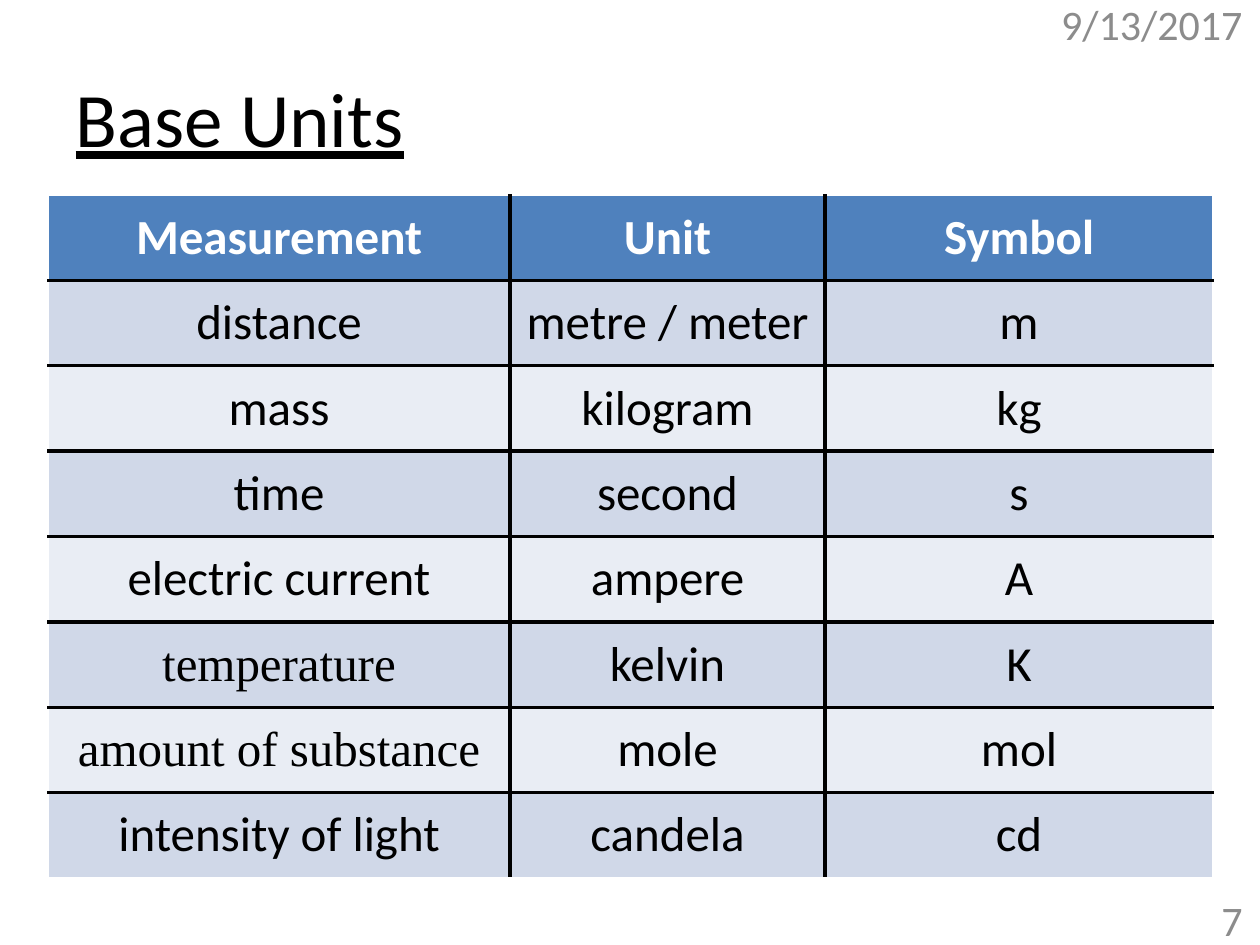
from dataclasses import dataclass
from typing import NamedTuple

from lxml.etree import SubElement
from pptx import Presentation
from pptx.dml.color import RGBColor
from pptx.enum.text import MSO_ANCHOR, PP_ALIGN
from pptx.oxml.ns import qn
from pptx.util import Emu, Pt


@dataclass(frozen=True)
class Theme:
    black: str = "000000"
    white: str = "FFFFFF"
    gray: str = "8C8C8C"
    header: str = "4F81BD"
    bands: tuple[str, str] = ("D0D8E8", "E9EDF4")
    font: str = "Calibri"
    serif: str = "Times New Roman"
    title_size: int = 44
    table_size: int = 28
    footer_size: int = 24
    grid_width: float = 2.25
    edge_width: float = 1


class BaseUnit(NamedTuple):
    measurement: str
    unit: str
    symbol: str
    measurement_font: str


class Box(NamedTuple):
    left: int
    top: int
    width: int
    height: int


class Note(NamedTuple):
    text: str
    box: Box


THEME = Theme()
PIXELS_PER_INCH = 126
HEADINGS = BaseUnit("Measurement", "Unit", "Symbol", THEME.font)
BASE_UNITS = [
    BaseUnit("distance", "metre / meter", "m", THEME.font),
    BaseUnit("mass", "kilogram", "kg", THEME.font),
    BaseUnit("time", "second", "s", THEME.font),
    BaseUnit("electric current", "ampere", "A", THEME.font),
    BaseUnit("temperature", "kelvin", "K", THEME.serif),
    BaseUnit("amount of substance", "mole", "mol", THEME.serif),
    BaseUnit("intensity of light", "candela", "cd", THEME.font),
]
COLUMN_WIDTHS = [462, 315, 388]
TITLE_BOX = Box(63, 38, 1134, 157)
TABLE_BOX = Box(48, 195, sum(COLUMN_WIDTHS), 683)
NOTES = [
    Note("9/13/2017", Box(1040, -1, 215, 50)),
    Note("7", Box(1171, 895, 84, 50)),
]


def px(length: int) -> Emu:
    return Emu(round(length * 914400 / PIXELS_PER_INCH))


def write_text(text_frame, text: str, *, size: int, color: str = THEME.black,
               font: str = THEME.font, bold: bool = False,
               underline: bool = False, align=PP_ALIGN.LEFT) -> None:
    paragraph = text_frame.paragraphs[0]
    paragraph.alignment = align
    run = paragraph.add_run()
    run.text = text
    run.font.name = font
    run.font.size = Pt(size)
    run.font.bold = bold
    run.font.underline = underline
    run.font.color.rgb = RGBColor.from_string(color)


def draw_border(cell, side: str, is_edge: bool) -> None:
    width = THEME.edge_width if is_edge else THEME.grid_width
    color = THEME.white if is_edge else THEME.black
    properties = cell._tc.get_or_add_tcPr()
    line = SubElement(properties, qn(f"a:ln{side}"), w=str(Pt(width)))
    fill = SubElement(line, qn("a:solidFill"))
    SubElement(fill, qn("a:srgbClr"), val=color)


def draw_title(slide, text: str) -> None:
    title = slide.shapes.title
    title.left, title.top, title.width, title.height = map(px, TITLE_BOX)
    title.text_frame.vertical_anchor = MSO_ANCHOR.MIDDLE
    write_text(title.text_frame, text, size=THEME.title_size, underline=True)


def draw_table(slide) -> None:
    rows = [HEADINGS, *BASE_UNITS]
    last_row, last_column = len(rows) - 1, len(COLUMN_WIDTHS) - 1
    table = slide.shapes.add_table(
        len(rows), len(COLUMN_WIDTHS), *map(px, TABLE_BOX)).table
    for column, width in zip(table.columns, COLUMN_WIDTHS):
        column.width = px(width)
    for row_index, unit in enumerate(rows):
        table.rows[row_index].height = Emu(px(TABLE_BOX.height) // len(rows))
        is_header = row_index == 0
        fill = THEME.header if is_header else THEME.bands[(row_index - 1) % 2]
        for column_index, text in enumerate(unit[:3]):
            cell = table.cell(row_index, column_index)
            cell.vertical_anchor = MSO_ANCHOR.MIDDLE
            draw_border(cell, "L", column_index == 0)
            draw_border(cell, "R", column_index == last_column)
            draw_border(cell, "T", is_header)
            draw_border(cell, "B", row_index == last_row)
            cell.fill.solid()
            cell.fill.fore_color.rgb = RGBColor.from_string(fill)
            write_text(
                cell.text_frame, text, size=THEME.table_size, bold=is_header,
                color=THEME.white if is_header else THEME.black,
                font=unit.measurement_font if column_index == 0 else THEME.font,
                align=PP_ALIGN.CENTER)


def draw_note(slide, note: Note) -> None:
    text_frame = slide.shapes.add_textbox(*map(px, note.box)).text_frame
    text_frame.word_wrap = True
    text_frame.vertical_anchor = MSO_ANCHOR.MIDDLE
    write_text(text_frame, note.text, size=THEME.footer_size,
               color=THEME.gray, align=PP_ALIGN.RIGHT)


def main() -> None:
    presentation = Presentation()
    presentation.slide_width, presentation.slide_height = px(1260), px(945)
    slide = presentation.slides.add_slide(presentation.slide_layouts[5])
    draw_title(slide, "Base Units")
    draw_table(slide)
    for note in NOTES:
        draw_note(slide, note)
    presentation.save("out.pptx")


if __name__ == "__main__":
    main()
